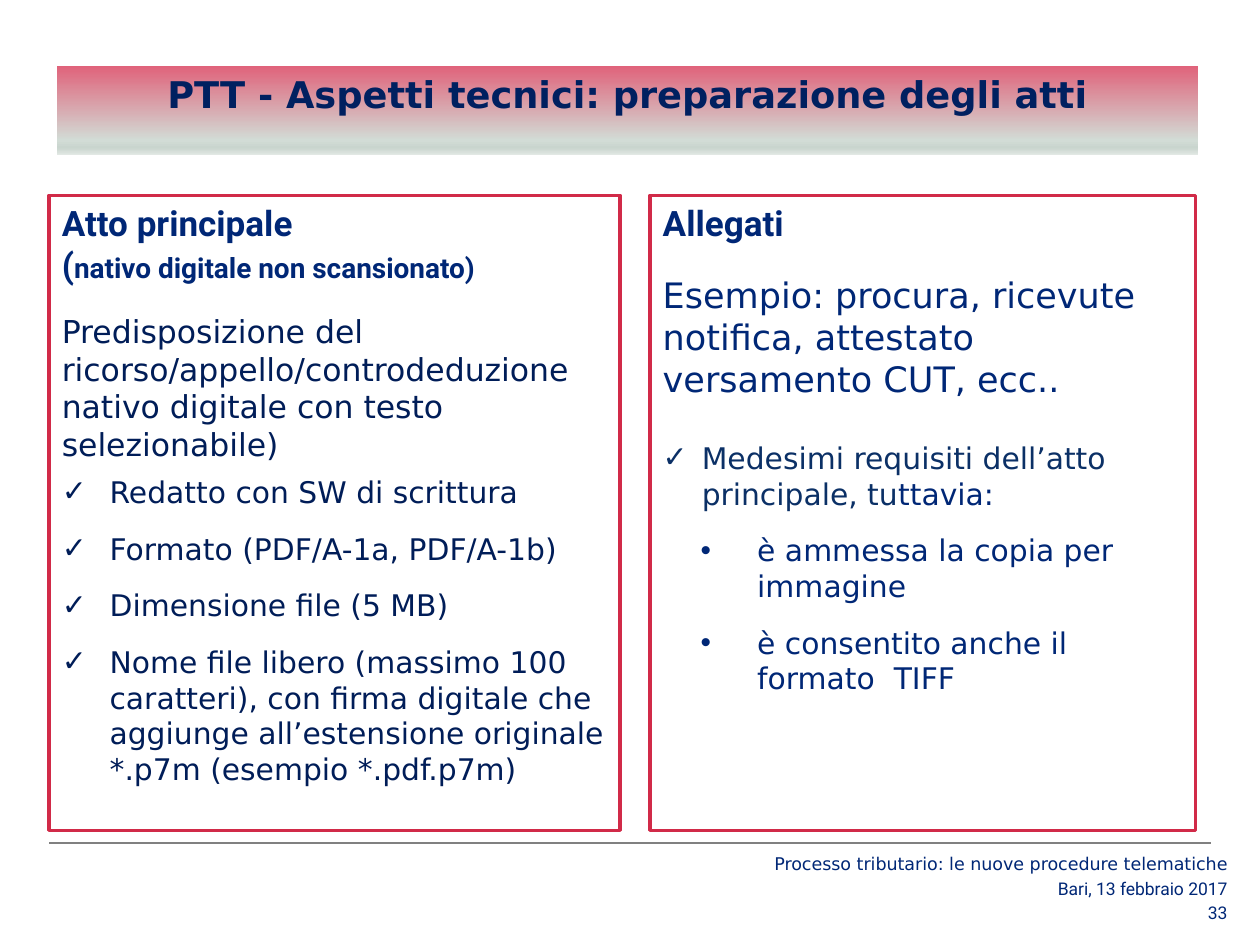
from dataclasses import dataclass
from typing import Optional

from lxml.etree import SubElement
from pptx import Presentation
from pptx.dml.color import RGBColor
from pptx.enum.shapes import MSO_CONNECTOR
from pptx.enum.text import MSO_ANCHOR, MSO_AUTO_SIZE, PP_ALIGN
from pptx.oxml.ns import qn
from pptx.util import Inches, Pt


@dataclass(frozen=True)
class Theme:
    heading_font: str = "Roboto"
    text_font: str = "DejaVu Sans"
    title: str = "002060"
    blue: str = "002776"
    navy: str = "001D58"
    slate: str = "0B3066"
    red: str = "D12A48"
    white: str = "FFFFFF"
    rule: str = "808080"
    banner: tuple = ((0, "E0627A"), (84, "D2DCD6"), (92, "C9D5CE"), (100, "E2E8E4"))
    title_size: float = 21
    heading_size: float = 20
    note_size: float = 16
    intro_size: float = 18
    item_size: float = 17
    footer_size: float = 10
    line_factor: float = 1.2


THEME = Theme()


@dataclass(frozen=True)
class Span:
    text: str
    color: Optional[str] = None
    size: Optional[float] = None


@dataclass(frozen=True)
class Bullet:
    mark: str
    margin: float
    hanging: float
    level: int = 0


@dataclass(frozen=True)
class Para:
    spans: tuple
    size: float
    color: str
    bullet: Optional[Bullet] = None
    before: float = 0
    after: float = 0
    heading: bool = False


@dataclass(frozen=True)
class Panel:
    left: float
    width: float
    paras: tuple


@dataclass(frozen=True)
class FooterLine:
    text: str
    middle: float
    font: str


LEFT_CHECK = Bullet("✓", 0.38, 0.38)
RIGHT_CHECK = Bullet("✓", 0.31, 0.31)
DOT = Bullet("•", 0.75, 0.45, level=1)


def heading(*spans: Span) -> Para:
    return Para(spans, THEME.heading_size, THEME.blue, heading=True)


def item(bullet: Bullet, color: str, *spans: Span, before: float = 6) -> Para:
    return Para(spans, THEME.item_size, color, bullet, before, 6)


PANELS = (
    Panel(0.39, 4.53, (
        heading(Span("Atto principale\n("),
                Span("nativo digitale non scansionato)", size=THEME.note_size)),
        Para((Span("Predisposizione del ricorso/appello/controdeduzione "
                   "nativo digitale con testo selezionabile)"),),
             THEME.intro_size, THEME.navy, before=15),
        *(item(LEFT_CHECK, THEME.navy, Span(text)) for text in (
            "Redatto con SW di scrittura",
            "Formato (PDF/A-1a, PDF/A-1b)",
            "Dimensione file (5 MB)",
            "Nome file libero (massimo 100 caratteri), con firma digitale che "
            "aggiunge all’estensione originale *.p7m (esempio *.pdf.p7m)",
        )),
    )),
    Panel(5.16, 4.33, (
        heading(Span("Allegati")),
        Para((Span("Esempio: procura, ricevute notifica, attestato versamento CUT, ecc.."),),
             THEME.heading_size, THEME.blue, before=17),
        item(RIGHT_CHECK, THEME.blue,
             Span("Medesimi requisiti dell’atto principale, tu", THEME.slate),
             Span("ttavia:"), before=23),
        item(DOT, THEME.blue, Span("è ammessa la copia per immagine")),
        item(DOT, THEME.blue, Span("è consentito anche il formato  TIFF")),
    )),
)

FOOTER = (
    FooterLine("Processo tributario: le nuove procedure telematiche", 6.85, THEME.text_font),
    FooterLine("Bari, 13 febbraio 2017", 7.05, THEME.heading_font),
    FooterLine("33", 7.24, THEME.heading_font),
)


def rgb(value: str) -> RGBColor:
    return RGBColor.from_string(value)


def set_font(font, name: str, size: float, color: str, bold: bool = False) -> None:
    font.name, font.size, font.bold = name, Pt(size), bold
    font.color.rgb = rgb(color)


def place(box, left: float, top: float, width: float, height: float) -> None:
    box.left, box.top = Inches(left), Inches(top)
    box.width, box.height = Inches(width), Inches(height)


def set_bullet(paragraph, bullet: Optional[Bullet]) -> None:
    """Give the paragraph its mark and hanging indent, or clear the inherited ones."""
    properties = paragraph._p.get_or_add_pPr()
    properties.set("marL", str(Inches(bullet.margin if bullet else 0)))
    properties.set("indent", str(-Inches(bullet.hanging if bullet else 0)))
    if bullet:
        paragraph.level = bullet.level
        SubElement(properties, qn("a:buChar")).set("char", bullet.mark)
    else:
        SubElement(properties, qn("a:buNone"))


def write_para(paragraph, para: Para) -> None:
    paragraph.alignment = PP_ALIGN.LEFT
    paragraph.space_before, paragraph.space_after = Pt(para.before), Pt(para.after)
    if not para.heading:
        paragraph.line_spacing = Pt(para.size * THEME.line_factor)
    set_bullet(paragraph, para.bullet)
    name = THEME.heading_font if para.heading else THEME.text_font
    set_font(paragraph.font, name, para.size, para.color, para.heading)
    for span in para.spans:
        for number, line in enumerate(span.text.split("\n")):
            if number:
                paragraph.add_line_break()
            run = paragraph.add_run()
            run.text = line
            if span.size:
                run.font.size = Pt(span.size)
            if span.color:
                run.font.color.rgb = rgb(span.color)


def draw_panel(box, panel: Panel) -> None:
    place(box, panel.left, 1.55, panel.width, 5.04)
    box.fill.solid()
    box.fill.fore_color.rgb = rgb(THEME.white)
    box.line.color.rgb = rgb(THEME.red)
    box.line.width = Pt(2)
    frame = box.text_frame
    frame.auto_size = MSO_AUTO_SIZE.NONE
    frame.vertical_anchor = MSO_ANCHOR.TOP
    for number, para in enumerate(panel.paras):
        write_para(frame.add_paragraph() if number else frame.paragraphs[0], para)


def draw_banner(box, text: str) -> None:
    place(box, 0.45, 0.52, 9.06, 0.71)
    box.fill.gradient()
    box.fill.gradient_angle = 270
    stops = box._element.spPr.find(qn("a:gradFill")).find(qn("a:gsLst"))
    stops.clear()
    for position, color in THEME.banner:
        stop = SubElement(stops, qn("a:gs"), pos=str(position * 1000))
        SubElement(stop, qn("a:srgbClr"), val=color)
    frame = box.text_frame
    frame.text = text
    frame.auto_size = MSO_AUTO_SIZE.NONE
    frame.vertical_anchor = MSO_ANCHOR.TOP
    frame.paragraphs[0].alignment = PP_ALIGN.CENTER
    set_font(frame.paragraphs[0].font, THEME.text_font, THEME.title_size, THEME.title, True)


def draw_footer(page) -> None:
    rule = page.shapes.add_connector(
        MSO_CONNECTOR.STRAIGHT, Inches(0.39), Inches(6.69), Inches(9.61), Inches(6.69))
    rule.line.color.rgb = rgb(THEME.rule)
    rule.line.width = Pt(0.75)
    SubElement(rule._element.spPr, qn("a:effectLst"))
    for line in FOOTER:
        box = page.shapes.add_textbox(
            Inches(5.94), Inches(line.middle - 0.09), Inches(3.9), Inches(0.18))
        frame = box.text_frame
        frame.word_wrap = True
        frame.margin_top = frame.margin_bottom = 0
        frame.vertical_anchor = MSO_ANCHOR.MIDDLE
        frame.text = line.text
        frame.paragraphs[0].alignment = PP_ALIGN.RIGHT
        set_font(frame.paragraphs[0].font, line.font, THEME.footer_size, THEME.blue)


def main() -> None:
    deck = Presentation()
    deck.slide_width, deck.slide_height = Inches(10), Inches(7.5)
    page = deck.slides.add_slide(deck.slide_layouts.get_by_name("Two Content"))
    title, *bodies = page.placeholders
    draw_banner(title, "PTT - Aspetti tecnici: preparazione degli atti")
    for box, panel in zip(bodies, PANELS):
        draw_panel(box, panel)
    draw_footer(page)
    deck.save("out.pptx")


if __name__ == "__main__":
    main()
